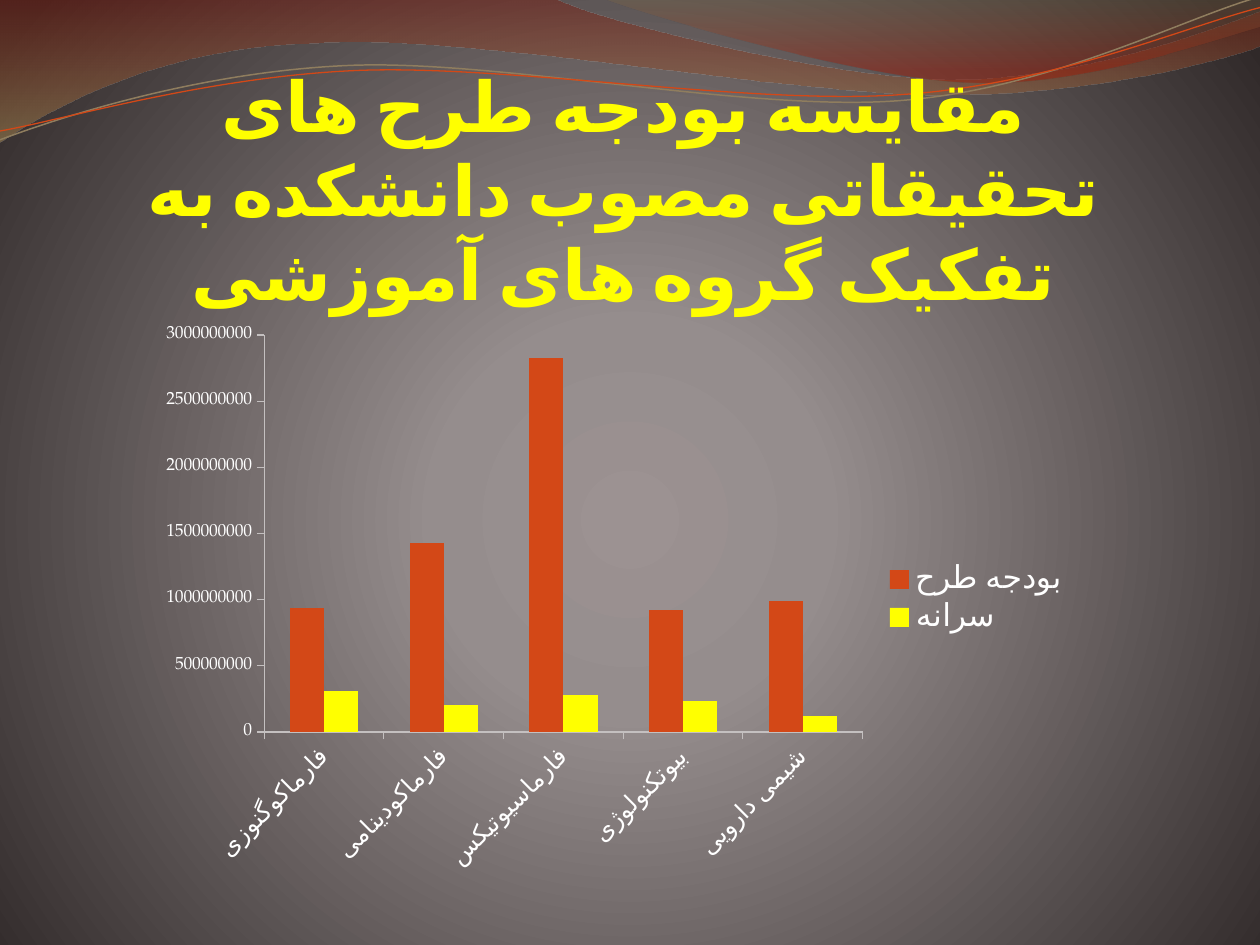
from lxml import etree
from pptx import Presentation
from pptx.chart.data import CategoryChartData
from pptx.dml.color import RGBColor
from pptx.enum.chart import XL_CHART_TYPE as ChartType, XL_LEGEND_POSITION as LegendPos, XL_TICK_MARK as Tick
from pptx.enum.text import MSO_ANCHOR as Anchor, PP_ALIGN as Align
from pptx.oxml import parse_xml
from pptx.oxml.ns import nsdecls, qn
from pptx.util import Cm, Pt

COLORS = {
    "glow": "9C9292", "gray": "958D8D", "dark": "302929",
    "maroon": "7C1A0E", "sand": "A18552", "khaki": "7E6B48", "red": "9F1705",
    "thread": "8F7D5E", "orange": "D34817", "yellow": "FFFF00",
    "white": "FFFFFF", "axis": "C4C0C0",
}
FONT, NUMBER_FONT = "Calibri", "TeX Gyre Pagella"
INCH = 2.54

RADIAL = '<a:path path="circle"><a:fillToRect l="10000" t="110000" r="10000" b="100000"/></a:path>'
DOWNWARD = '<a:lin ang="5400000" scaled="0"/>'

LEFT_WAVE = [
    (0, 0), (4.4, -0.01),
    (4.76, 0.17, 6.64, 0.63, 7.58, 0.63), (8.53, 0.63, 9.58, 0.26, 10, 0.09),
    (10.01, 0.36),
    (9.83, 0.44, 8.7, 0.76, 7.46, 0.75), (6.22, 0.75, 3.82, 0.28, 2.57, 0.34),
    (1.29, 0.36, 0.46, 0.83, -0.01, 1.13),
]
RIGHT_WAVE = [
    (4.79, -0.01),
    (5.09, 0.11, 6.82, 0.62, 7.69, 0.65), (8.56, 0.69, 9.61, 0.32, 10, 0.21),
    (10, 0),
]
TAN_THREAD = [
    (0, 1.11),
    (0.48, 0.93, 1.58, 0.57, 2.77, 0.52), (3.95, 0.47, 5.93, 0.89, 7.13, 0.8),
    (8.33, 0.71, 9.38, 0.15, 9.98, -0.02),
]
ORANGE_THREAD = [
    (0, 1.04),
    (0.47, 0.96, 1.64, 0.61, 2.83, 0.56), (4.03, 0.51, 5.97, 0.84, 7.17, 0.75),
    (8.36, 0.67, 9.41, 0.21, 10, 0.06),
]

CATEGORIES = ["فارماکوگنوزی", "فارماکودینامی", "فارماسیوتیکس", "بیوتکنولوژی", "شیمی دارویی"]
SERIES = [
    ("بودجه طرح", [940000000, 1430000000, 2830000000, 920000000, 990000000], "orange"),
    ("سرانه", [310000000, 200000000, 280000000, 230000000, 120000000], "yellow"),
]


def rgb(name):
    return RGBColor.from_string(COLORS[name])


def stop_xml(pos, name, alpha=100):
    opacity = f'<a:alpha val="{alpha * 1000}"/>' if alpha < 100 else ""
    return f'<a:gs pos="{pos * 1000}"><a:srgbClr val="{COLORS[name]}">{opacity}</a:srgbClr></a:gs>'


def set_gradient(fill, holder, stops, direction):
    fill.gradient()
    new = parse_xml(f'<a:gradFill {nsdecls("a")} rotWithShape="1">'
                    f'<a:gsLst>{"".join(stop_xml(*stop) for stop in stops)}</a:gsLst>'
                    f'{direction}</a:gradFill>')
    old = holder.find(".//" + qn("a:gradFill"))
    old.getparent().replace(old, new)


def add_outline(slide, segments, close):
    points = [(Cm(seg[i] * INCH), Cm(seg[i + 1] * INCH))
              for seg in segments for i in range(0, len(seg), 2)]
    builder = slide.shapes.build_freeform(*points[0])
    builder.add_line_segments(points[1:], close=close)
    sp = builder.convert_to_shape()
    sp.shadow.inherit = False
    lines = iter(sp._element.findall(".//" + qn("a:lnTo")))
    for seg in segments[1:]:
        line = next(lines)
        if len(seg) == 6:
            line.tag_holder = None
            curve = etree.Element(qn("a:cubicBezTo"))
            line.addprevious(curve)
            for old in (line, next(lines), next(lines)):
                curve.append(old[0])
                old.getparent().remove(old)
    return sp


def add_wave(slide, segments, stops):
    sp = add_outline(slide, segments, True)
    set_gradient(sp.fill, sp._element.spPr, stops, DOWNWARD)
    sp.line.fill.background()


def add_thread(slide, segments, color, width):
    sp = add_outline(slide, segments, False)
    sp.fill.background()
    sp.line.color.rgb = rgb(color)
    sp.line.width = Pt(width)


def set_font(font, size, color="white", name=FONT, bold=False):
    font.size = Pt(size)
    font.name = name
    font.bold = bold
    font.color.rgb = rgb(color)


def add_text(slide, text, left, top, width, height, **font):
    tf = slide.shapes.add_textbox(Cm(left), Cm(top), Cm(width), Cm(height)).text_frame
    tf.word_wrap = True
    tf.vertical_anchor = Anchor.BOTTOM
    tf.margin_left = tf.margin_top = tf.margin_bottom = 0
    tf.margin_right = Cm(0.05)
    p = tf.paragraphs[0]
    p.alignment = Align.CENTER
    p._p.get_or_add_pPr().set("rtl", "1")
    r = p.add_run()
    r.text = text
    set_font(r.font, **font)
    props = r._r.get_or_add_rPr()
    props.set("lang", "fa-IR")
    etree.SubElement(props, qn("a:cs")).set("typeface", FONT)


def format_axis(axis, **font):
    axis.has_major_gridlines = False
    axis.major_tick_mark = Tick.OUTSIDE
    axis.minor_tick_mark = Tick.NONE
    axis.format.line.color.rgb = rgb("axis")
    axis.format.line.width = Pt(0.75)
    set_font(axis.tick_labels.font, **font)


def place_plot(chart, x, y, w, h):
    plot_area = chart._chartSpace.chart.plotArea
    for old in plot_area.findall(qn("c:layout")):
        plot_area.remove(old)
    values = "".join(f'<c:{key} val="{val}"/>' for key, val in zip("xywh", (x, y, w, h)))
    plot_area.insert(0, parse_xml(
        f'<c:layout {nsdecls("c")}><c:manualLayout><c:layoutTarget val="inner"/>'
        f'<c:xMode val="edge"/><c:yMode val="edge"/>{values}</c:manualLayout></c:layout>'))


def add_budget_chart(slide, left, top, width, height):
    data = CategoryChartData()
    data.categories = CATEGORIES
    for name, values, _ in SERIES:
        data.add_series(name, values)
    chart = slide.shapes.add_chart(ChartType.COLUMN_CLUSTERED, Cm(left), Cm(top),
                                   Cm(width), Cm(height), data).chart
    chart.has_title = False
    set_font(chart.font, 10, name=NUMBER_FONT)
    plot = chart.plots[0]
    plot.gap_width = 150
    plot.overlap = 0
    plot.vary_by_categories = False
    for series, (_, _, color) in zip(plot.series, SERIES):
        series.format.fill.solid()
        series.format.fill.fore_color.rgb = rgb(color)
    format_axis(chart.category_axis, size=14)
    chart.category_axis._element.find(qn("c:txPr")).find(qn("a:bodyPr")).set("rot", "-2700000")
    format_axis(chart.value_axis, size=10, name=NUMBER_FONT)
    chart.value_axis.minimum_scale = 0
    chart.value_axis.maximum_scale = 3000000000
    chart.value_axis.major_unit = 500000000
    chart.has_legend = True
    chart.legend.position = LegendPos.RIGHT
    chart.legend.include_in_layout = False
    set_font(chart.legend.font, 18)
    place_plot(chart, 1 / 8, 1 / 28, 0.64, 0.7)


def main():
    prs = Presentation()
    prs.slide_width, prs.slide_height = Cm(25.4), Cm(19.05)
    s = prs.slides.add_slide(prs.slide_layouts[6])
    set_gradient(s.background.fill, s._element,
                 [(0, "glow"), (25, "gray"), (100, "dark")], RADIAL)
    add_wave(s, LEFT_WAVE, [(0, "maroon", 45), (100, "sand", 55)])
    add_wave(s, RIGHT_WAVE, [(0, "khaki", 30), (80, "red", 45)])
    add_thread(s, TAN_THREAD, "thread", 0.85)
    add_thread(s, ORANGE_THREAD, "orange", 0.75)
    add_text(s, "مقایسه بودجه طرح های تحقیقاتی مصوب دانشکده به تفکیک گروه های آموزشی",
             1.27, 1.27, 22.66, 5.08, size=40, color="yellow", bold=True)
    add_budget_chart(s, 2.97, 6.35, 18.85, 11.43)
    prs.save("out.pptx")


if __name__ == "__main__":
    main()
